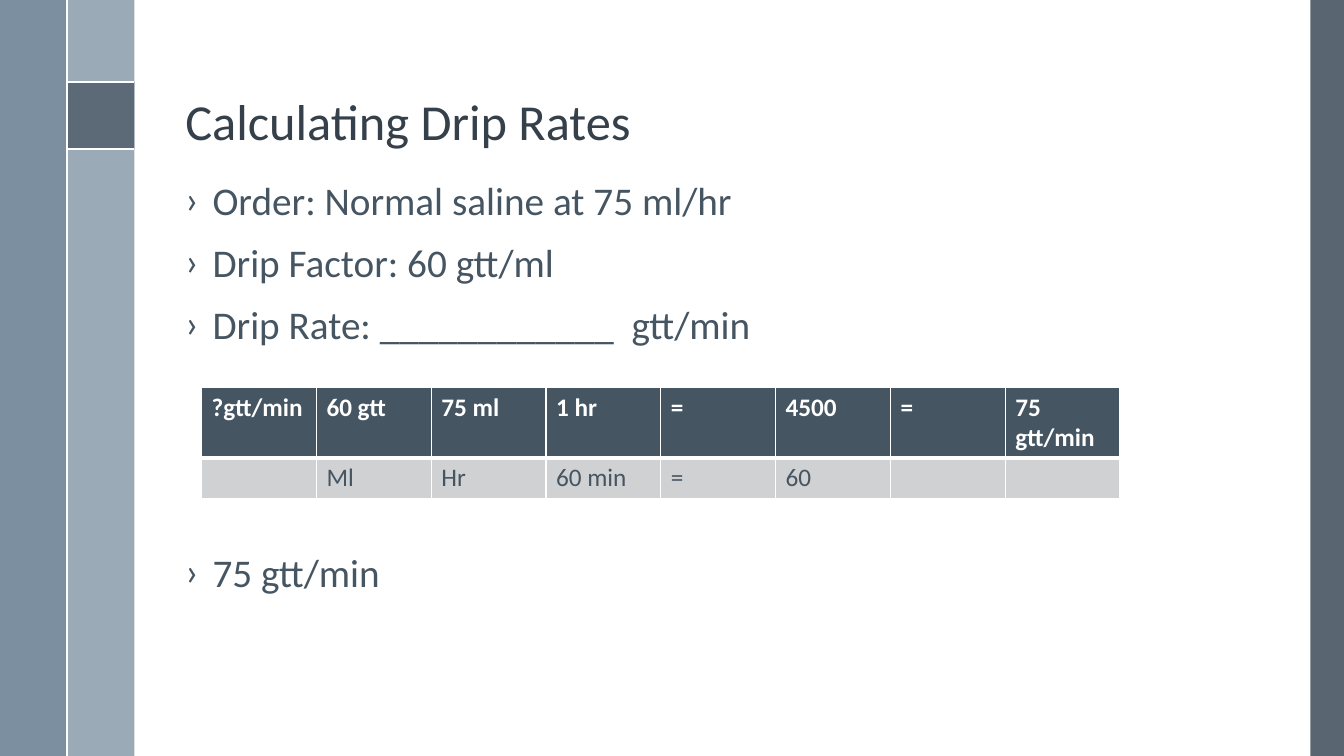
import pptx
import pptx.dml.color
import pptx.enum.shapes
import pptx.enum.text
import pptx.oxml
import pptx.oxml.ns
import pptx.util
from lxml import etree

WIDTH, HEIGHT = 13.33, 7.5
BAND = WIDTH / 20
FONT = "Calibri"
SLATE, WHITE = "465562", "FFFFFF"
PI_POINTS = [
    (1.18, 0.98), (0.9, 0.98), (0.86, 1), (0.83, 1.04), (0.84, 1.05), (0.85, 1.05),
    (0.87, 1.02), (0.9, 1.01), (0.94, 1.01), (0.93, 1.14), (0.91, 1.22), (0.88, 1.27),
    (0.88, 1.29), (0.9, 1.29), (0.94, 1.21), (0.96, 1.1), (0.97, 1.01), (1.06, 1.01),
    (1.05, 1.22), (1.05, 1.26), (1.07, 1.29), (1.1, 1.3), (1.12, 1.3), (1.16, 1.28),
    (1.19, 1.22), (1.18, 1.21), (1.16, 1.22), (1.15, 1.26), (1.11, 1.28), (1.08, 1.27),
    (1.07, 1.22), (1.09, 1.01), (1.18, 1.01), (1.19, 1),
]
ORDERS = [
    "Order: Normal saline at 75 ml/hr",
    "Drip Factor: 60 gtt/ml",
    "Drip Rate: ____________  gtt/min",
]
ANSWER = "75 gtt/min"
CALCULATION = [
    ["?gtt/min", "60 gtt", "75 ml", "1 hr", "=", "4500", "=", "75 gtt/min"],
    ["", "Ml", "Hr", "60 min", "=", "60", "", ""],
]


def color(value):
    return pptx.dml.color.RGBColor.from_string(value)


def inches(*lengths):
    return [pptx.util.Inches(length) for length in lengths]


def apply(target, values):
    for name, value in values.items():
        setattr(target, name, value)


def paint(shape, value, opacity=100):
    shape.shadow.inherit = False
    shape.fill.solid()
    shape.fill.fore_color.rgb = color(value)
    shape.line.fill.background()
    if opacity < 100:
        fill = shape.element.spPr.find(pptx.oxml.ns.qn("a:solidFill"))
        etree.SubElement(fill[0], pptx.oxml.ns.qn("a:alpha"), val=str(opacity * 1000))


def write(para, text, size, value, bold=False):
    span = para.add_run()
    span.text = text
    apply(span.font, {"name": FONT, "size": pptx.util.Pt(size), "bold": bold})
    span.font.color.rgb = color(value)


def add_band(page, box, value, opacity=100):
    shape = page.shapes.add_shape(pptx.enum.shapes.MSO_SHAPE.RECTANGLE, *inches(*box))
    paint(shape, value, opacity)


def add_rule(page, start, end):
    rule = page.shapes.add_connector(
        pptx.enum.shapes.MSO_CONNECTOR.STRAIGHT, *inches(*start, *end)
    )
    rule.line.color.rgb = color(WHITE)
    rule.line.width = pptx.util.Pt(1.5)
    etree.SubElement(rule.element.spPr, pptx.oxml.ns.qn("a:effectLst"))


def add_frame(page, box):
    left, top, width, height = box
    right, badge_top = left + width, top + 0.81
    badge_bottom = badge_top + BAND
    inner = left + BAND
    add_band(page, (right - BAND / 2, top, BAND / 2, height), "475562", 90)
    add_band(page, (inner, top, BAND, height), "9BAAB7")
    add_band(page, (left, top, BAND, height), "6A8093", 88)
    add_band(page, (inner, badge_top, BAND, BAND), "475562", 75)
    for level in (badge_top, badge_bottom):
        add_rule(page, (inner, level), (inner + BAND, level))
    points = [(left + x, top + y) for x, y in PI_POINTS]
    builder = page.shapes.build_freeform(*points[0], scale=pptx.util.Inches(1))
    builder.add_line_segments(points[1:], close=True)
    paint(builder.convert_to_shape(), WHITE)
    add_rule(page, (inner, top), (inner, top + height))


def add_text(page, box, anchor):
    frame = page.shapes.add_textbox(*inches(*box)).text_frame
    apply(frame, {"word_wrap": True, "vertical_anchor": anchor})
    return frame


def add_title(page, box):
    frame = add_text(page, box, pptx.enum.text.MSO_ANCHOR.BOTTOM)
    para = frame.paragraphs[0]
    para.line_spacing = 0.9
    write(para, "Calculating Drip Rates", 36, "35404A")


def add_bullets(page, box):
    frame = add_text(page, box, pptx.enum.text.MSO_ANCHOR.TOP)
    gap, table_gap = 14, 147
    for index, text in enumerate([*ORDERS, ANSWER]):
        para = frame.paragraphs[0] if index == 0 else frame.add_paragraph()
        space = table_gap if text == ANSWER else gap
        apply(para, {"line_spacing": 0.9, "space_before": pptx.util.Pt(space)})
        indent = pptx.util.Inches(0.27)
        settings = para._p.get_or_add_pPr()
        settings.set("marL", str(indent))
        settings.set("indent", str(-indent))
        etree.SubElement(settings, pptx.oxml.ns.qn("a:buFont"), typeface=FONT)
        etree.SubElement(settings, pptx.oxml.ns.qn("a:buChar"), char="›")
        write(para, text, 28, SLATE)


def add_borders(cell, widths):
    settings = cell._tc.get_or_add_tcPr()
    for index, (side, width) in enumerate(widths.items()):
        border = pptx.oxml.parse_xml(
            f'<a:ln{side} {pptx.oxml.ns.nsdecls("a")} w="{pptx.util.Pt(width)}">'
            f'<a:solidFill><a:srgbClr val="{WHITE}"/></a:solidFill></a:ln{side}>'
        )
        settings.insert(index, border)


def add_calculation(page, box):
    rows, columns = len(CALCULATION), len(CALCULATION[0])
    table = page.shapes.add_table(rows, columns, *inches(*box)).table
    row_shares = (0.63, 0.37)
    for row, share in zip(table.rows, row_shares):
        row.height = pptx.util.Inches(box[3] * share)
    for column in table.columns:
        column.width = pptx.util.Inches(box[2] / columns)
    for row, texts in enumerate(CALCULATION):
        header = row == 0
        for column, text in enumerate(texts):
            cell = table.cell(row, column)
            cell.fill.solid()
            cell.fill.fore_color.rgb = color(SLATE if header else "CFD1D3")
            add_borders(cell, {"L": 1, "R": 1, "T": 1 if header else 3, "B": 3 if header else 1})
            if text:
                write(cell.text_frame.paragraphs[0], text, 18, WHITE if header else SLATE, header)


def build_drip_page(deck):
    page = deck.slides.add_slide(deck.slide_layouts[6])
    left, width = 1.74, 10.7
    add_frame(page, (0, 0, WIDTH, HEIGHT))
    add_title(page, (left, 0.19, width, 1.36))
    add_bullets(page, (left, 1.75, width, 5))
    add_calculation(page, (2, 3.84, 9.11, 1.11))


def main():
    deck = pptx.Presentation()
    deck.slide_width, deck.slide_height = inches(WIDTH, HEIGHT)
    build_drip_page(deck)
    deck.save("out.pptx")


if __name__ == "__main__":
    main()
